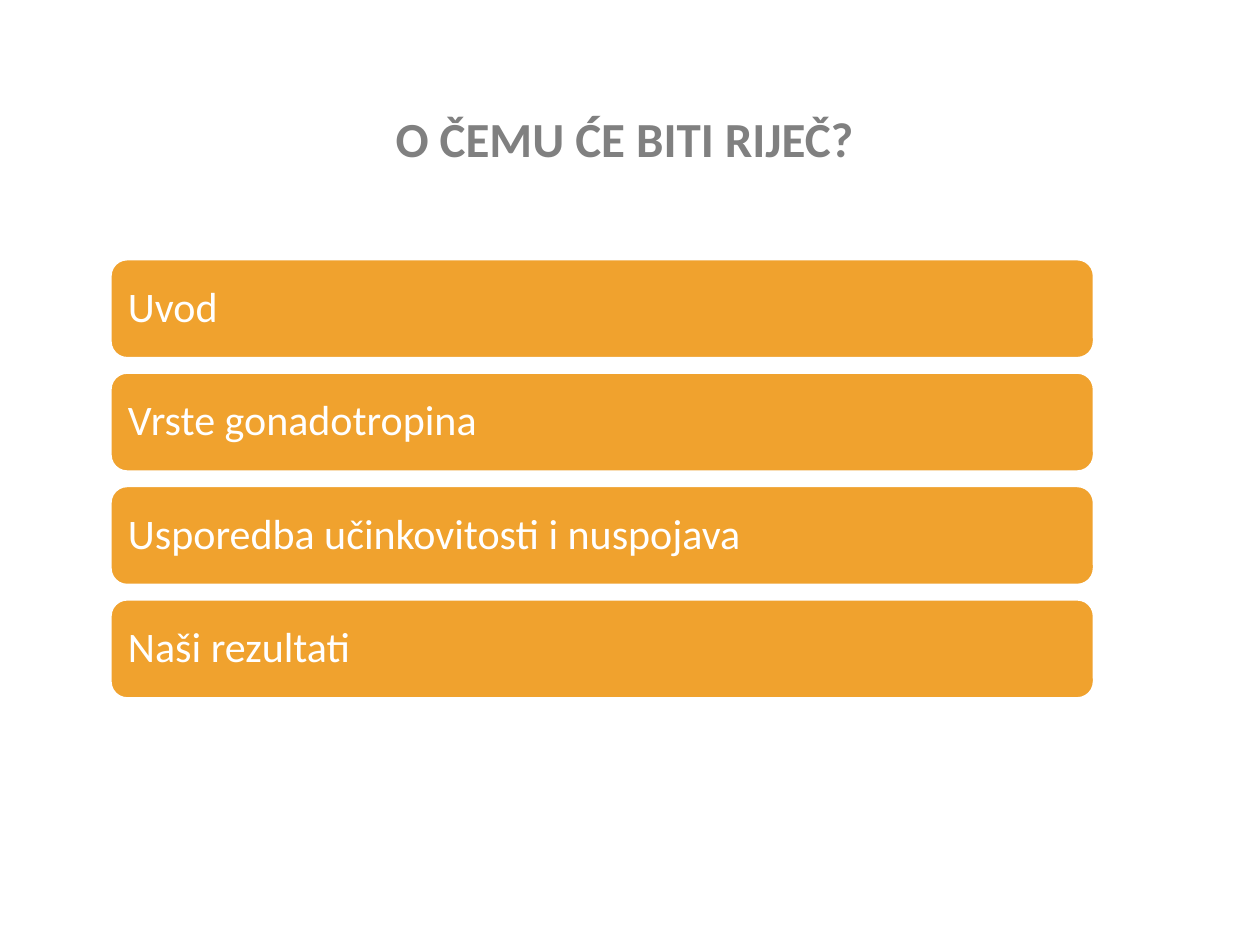
from dataclasses import dataclass

from pptx import Presentation
from pptx import util as u
from pptx.dml.color import RGBColor
from pptx.enum import shapes, text

TITLE = "O ČEMU ĆE BITI RIJEČ? "
TOPICS = [
    "Uvod",
    "Vrste gonadotropina",
    "Usporedba učinkovitosti i nuspojava",
    "Naši rezultati",
]


@dataclass(frozen=True)
class Theme:
    font: str = "Calibri"
    title_size: int = 28
    topic_size: int = 24
    grey: str = "808080"
    orange: str = "F0A22E"
    white: str = "FFFFFF"


THEME = Theme()
WIDTH, HEIGHT = 10, 7.5
TITLE_BOX = (0.69, 0.4, 8.62, 1.45)
BAR_LEFT, BAR_TOP, BAR_WIDTH, BAR_HEIGHT = 0.88, 2.06, 7.8, 0.78
BAR_GAP = 0.12
INSET = 0.1


def color(value):
    return RGBColor.from_string(value)


def write(shape, words, *, size, fill, bold=False, align=text.PP_ALIGN.LEFT, after=0):
    frame = shape.text_frame
    frame.word_wrap = True
    frame.auto_size = text.MSO_AUTO_SIZE.NONE
    frame.vertical_anchor = text.MSO_ANCHOR.MIDDLE
    frame.margin_left = frame.margin_right = u.Inches(INSET)
    frame.margin_top = frame.margin_bottom = u.Inches(INSET)
    paragraph = frame.paragraphs[0]
    paragraph.alignment = align
    paragraph.line_spacing = 0.9
    paragraph.space_before = u.Pt(0)
    paragraph.space_after = u.Pt(after)
    run = paragraph.add_run()
    run.text = words
    run.font.name = THEME.font
    run.font.size = u.Pt(size)
    run.font.bold = bold
    run.font.color.rgb = color(fill)


def add_title(slide):
    title = slide.shapes.title
    title.left, title.top, title.width, title.height = map(u.Inches, TITLE_BOX)
    write(title, TITLE, size=THEME.title_size, fill=THEME.grey, bold=True,
          align=text.PP_ALIGN.CENTER)


def add_topic(slide, row, words):
    top = BAR_TOP + row * (BAR_HEIGHT + BAR_GAP)
    box = map(u.Inches, (BAR_LEFT, top, BAR_WIDTH, BAR_HEIGHT))
    bar = slide.shapes.add_shape(shapes.MSO_SHAPE.ROUNDED_RECTANGLE, *box)
    bar.shadow.inherit = False
    bar.fill.solid()
    bar.fill.fore_color.rgb = color(THEME.orange)
    bar.line.color.rgb = color(THEME.white)
    bar.line.width = u.Pt(1)
    write(bar, words, size=THEME.topic_size, fill=THEME.white)


def main():
    presentation = Presentation()
    presentation.slide_width = u.Inches(WIDTH)
    presentation.slide_height = u.Inches(HEIGHT)
    slide = presentation.slides.add_slide(presentation.slide_layouts[5])
    add_title(slide)
    for row, words in enumerate(TOPICS):
        add_topic(slide, row, words)
    presentation.save("out.pptx")


if __name__ == "__main__":
    main()
